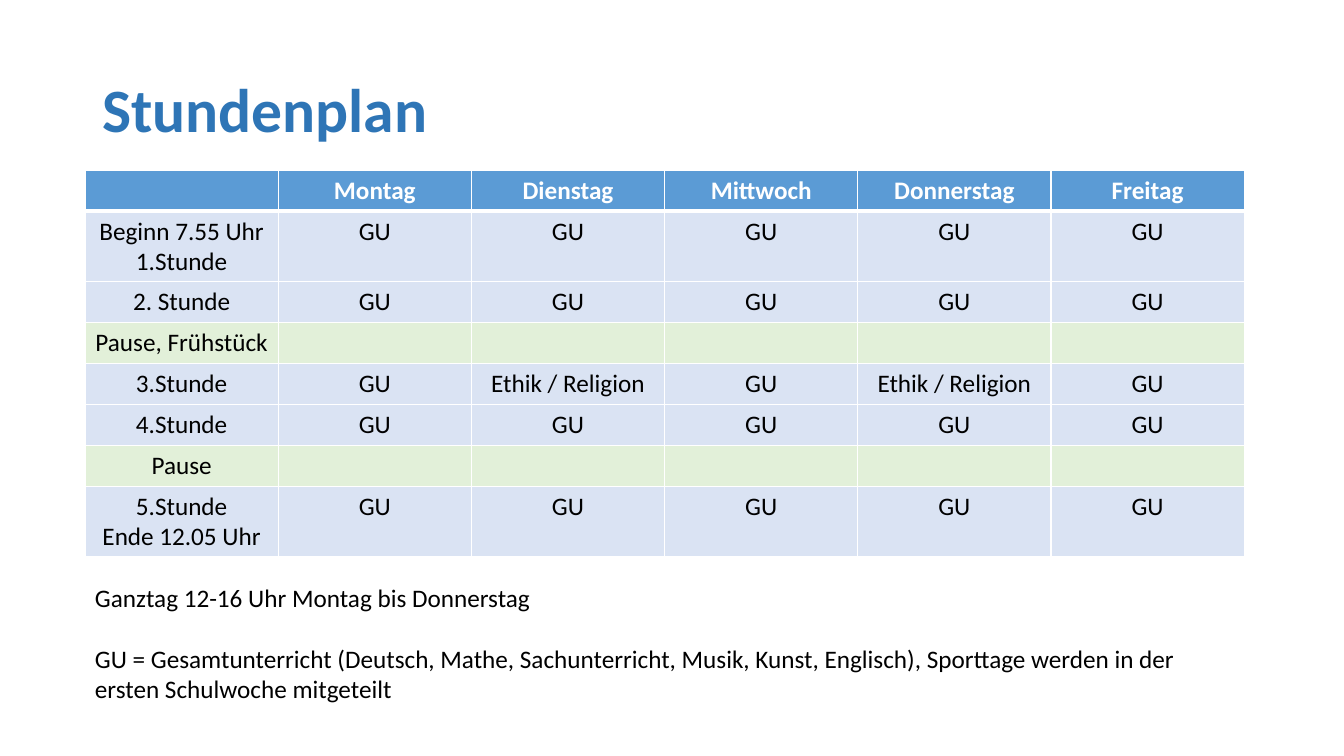
from dataclasses import dataclass

import lxml.etree
import pptx
import pptx.dml.color
import pptx.enum.text
import pptx.oxml.ns
import pptx.util

Align = pptx.enum.text.PP_ALIGN
Anchor = pptx.enum.text.MSO_ANCHOR


@dataclass(frozen=True)
class Theme:
    font: str = "Calibri"
    title_color: str = "2E75B6"
    header_fill: str = "5B9BD5"
    lesson_fill: str = "DAE3F3"
    break_fill: str = "E2F0D9"
    white: str = "FFFFFF"
    black: str = "000000"
    title_size: int = 44
    body_size: int = 18
    thin: int = 1
    thick: int = 3


@dataclass(frozen=True)
class Area:
    left: int
    top: int
    width: int
    height: int

    def emu(self) -> tuple[int, ...]:
        return tuple(map(px, (self.left, self.top, self.width, self.height)))


@dataclass(frozen=True)
class TextStyle:
    size: int
    color: str
    bold: bool = False
    align: Align = Align.LEFT
    line_spacing: float = 1.0
    gap: int = 0


@dataclass(frozen=True)
class Period:
    lines: tuple[str, ...]
    entries: tuple[str, ...]
    fill: str
    style: TextStyle


THEME = Theme()
EMU_PER_PX = 9525
ROW_HEIGHT = 39
TITLE_AREA = Area(88, 38, 1104, 139)
TABLE_AREA = Area(81, 162, 1104, 368)
NOTE_AREA = Area(81, 550, 1104, 126)

TITLE = TextStyle(THEME.title_size, THEME.title_color, True, line_spacing=0.9)
HEADER = TextStyle(THEME.body_size, THEME.white, True, Align.CENTER)
CELL = TextStyle(THEME.body_size, THEME.black, align=Align.CENTER)
NOTE = TextStyle(THEME.body_size, THEME.black, gap=22)

DAYS = ("Montag", "Dienstag", "Mittwoch", "Donnerstag", "Freitag")
ALL_GU = ("GU",) * len(DAYS)
FREE = ("",) * len(DAYS)
WITH_ETHICS = ("GU", "Ethik / Religion", "GU", "Ethik / Religion", "GU")


def lesson(*lines: str, entries: tuple[str, ...] = ALL_GU) -> Period:
    return Period(lines, entries, THEME.lesson_fill, CELL)


def pause(label: str) -> Period:
    return Period((label,), FREE, THEME.break_fill, CELL)


PERIODS = (
    Period(("",), DAYS, THEME.header_fill, HEADER),
    lesson("Beginn 7.55 Uhr", "1.Stunde"),
    lesson("2. Stunde"),
    pause("Pause, Frühstück"),
    lesson("3.Stunde", entries=WITH_ETHICS),
    lesson("4.Stunde"),
    pause("Pause"),
    lesson("5.Stunde", "Ende 12.05 Uhr"),
)
NOTES = (
    "Ganztag 12-16 Uhr Montag bis Donnerstag",
    "GU = Gesamtunterricht (Deutsch, Mathe, Sachunterricht, Musik, Kunst, "
    "Englisch), Sporttage werden in der ersten Schulwoche mitgeteilt",
)


def px(length: int) -> int:
    return pptx.util.Emu(length * EMU_PER_PX)


def rgb(color: str) -> pptx.dml.color.RGBColor:
    return pptx.dml.color.RGBColor.from_string(color)


def set_all(target: object, values: dict[str, object]) -> None:
    for name, value in values.items():
        setattr(target, name, value)


def write(frame: object, lines: tuple[str, ...], style: TextStyle) -> None:
    for index, line in enumerate(lines):
        para = frame.add_paragraph() if index else frame.paragraphs[0]
        set_all(para, {
            "alignment": style.align,
            "line_spacing": style.line_spacing,
            "space_before": pptx.util.Pt(style.gap if index else 0),
        })
        font_values = {
            "name": THEME.font,
            "size": pptx.util.Pt(style.size),
            "bold": style.bold,
        }
        if line:
            span = para.add_run()
            span.text = line
            font = span.font
        else:
            font = para.font
        set_all(font, font_values)
        font.color.rgb = rgb(style.color)


def add_text(page: object, area: Area, lines: tuple[str, ...],
             style: TextStyle, anchor: Anchor) -> None:
    box = page.shapes.add_textbox(*area.emu())
    set_all(box.text_frame, {"word_wrap": True, "vertical_anchor": anchor})
    write(box.text_frame, lines, style)


def add_borders(cell: object, row: int) -> None:
    properties = cell._tc.get_or_add_tcPr()
    widths = {
        "lnL": THEME.thin,
        "lnR": THEME.thin,
        "lnT": THEME.thick if row == 1 else THEME.thin,
        "lnB": THEME.thick if row == 0 else THEME.thin,
    }
    qualified = pptx.oxml.ns.qn
    for side, width in widths.items():
        line = lxml.etree.SubElement(
            properties, qualified(f"a:{side}"), w=str(pptx.util.Pt(width)))
        fill = lxml.etree.SubElement(line, qualified("a:solidFill"))
        lxml.etree.SubElement(fill, qualified("a:srgbClr"), val=THEME.white)


def add_timetable(page: object, area: Area, periods: tuple[Period, ...]) -> None:
    columns = len(DAYS) + 1
    graphic = page.shapes.add_table(len(periods), columns, *area.emu())
    table = graphic.table
    table.horz_banding = False
    for column in table.columns:
        column.width = px(area.width // columns)
    for row, period in enumerate(periods):
        table.rows[row].height = px(ROW_HEIGHT)
        contents = (period.lines, *((entry,) for entry in period.entries))
        for column, lines in enumerate(contents):
            cell = table.cell(row, column)
            add_borders(cell, row)
            cell.fill.solid()
            cell.fill.fore_color.rgb = rgb(period.fill)
            write(cell.text_frame, lines, period.style)
    graphic.height = px(area.height)


def main() -> None:
    deck = pptx.Presentation()
    set_all(deck, {"slide_width": px(1280), "slide_height": px(720)})
    page = deck.slides.add_slide(deck.slide_layouts[6])
    add_text(page, TITLE_AREA, ("Stundenplan",), TITLE, Anchor.MIDDLE)
    add_timetable(page, TABLE_AREA, PERIODS)
    add_text(page, NOTE_AREA, NOTES, NOTE, Anchor.TOP)
    deck.save("out.pptx")


if __name__ == "__main__":
    main()
